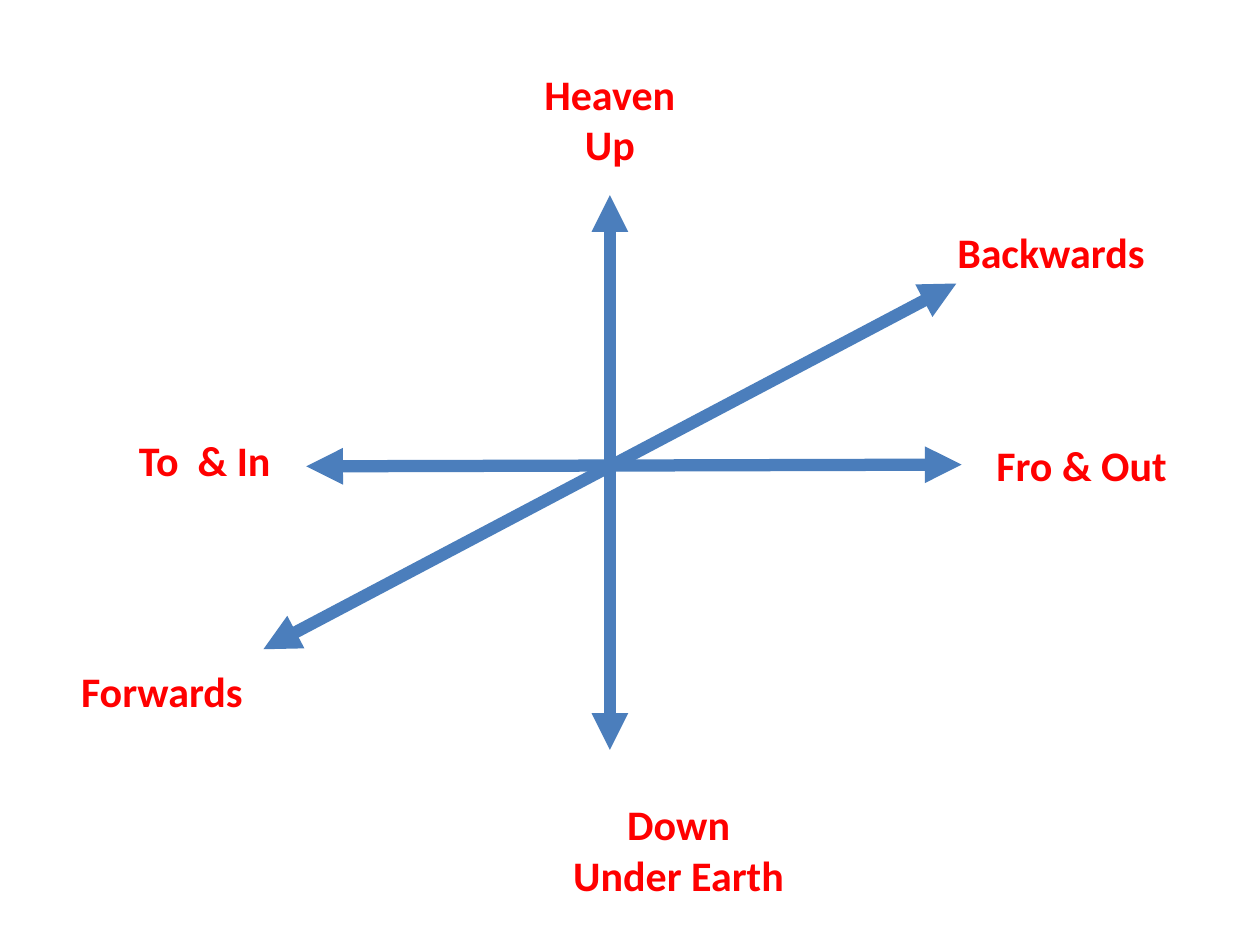
from lxml.etree import SubElement
from pptx import Presentation
from pptx.dml.color import RGBColor
from pptx.enum.shapes import MSO_CONNECTOR as Link
from pptx.enum.text import MSO_ANCHOR as Anchor, PP_ALIGN as Align
from pptx.oxml.ns import qn
from pptx.util import Pt

RED = RGBColor(0xFF, 0x00, 0x00)
BLUE = RGBColor(0x4B, 0x7E, 0xBC)

# Text, left, top, width
LABELS = [
    ("Heaven\nUp", 303, 39, 91),
    ("Down\nUnder Earth", 319, 456.5, 137.5),
    ("Fro & Out", 564, 251, 108),
    ("To  & In", 72, 248.5, 90),
    ("Backwards", 546, 129.5, 109),
    ("Forwards", 38, 380, 109),
]

# Start x, start y, end x, end y
AXES = [
    (348.5, 111.5, 348.5, 428.5),
    (549.5, 265.5, 175, 266.5),
    (546.5, 162, 150.5, 371),
]


class Sketch:
    font = "Calibri"
    size = 24
    row = 29
    weight = 7

    def __init__(self, slide):
        self.slide = slide

    def label(self, text, left, top, width):
        lines = text.count("\n") + 1
        box = self.slide.shapes.add_textbox(
            Pt(left), Pt(top), Pt(width), Pt(self.row * lines))
        frame = box.text_frame
        frame.word_wrap = True
        frame.vertical_anchor = Anchor.TOP
        frame.margin_left = frame.margin_right = 0
        frame.margin_top = frame.margin_bottom = 0
        frame.text = text
        for para in frame.paragraphs:
            para.alignment = Align.CENTER
            for run in para.runs:
                font = run.font
                font.name, font.size, font.bold = self.font, Pt(self.size), True
                font.color.rgb = RED

    def axis(self, *ends):
        """Draw a line with an arrowhead at both ends."""
        link = self.slide.shapes.add_connector(
            Link.STRAIGHT, *(Pt(end) for end in ends))
        link.line.color.rgb = BLUE
        link.line.width = Pt(self.weight)
        stroke = link.line._get_or_add_ln()
        for tip in ("a:headEnd", "a:tailEnd"):
            SubElement(stroke, qn(tip), type="triangle")
        SubElement(link._element.spPr, qn("a:effectLst"))


def main():
    deck = Presentation()
    deck.slide_width, deck.slide_height = Pt(720), Pt(540)
    blank = deck.slide_layouts[6]
    sketch = Sketch(deck.slides.add_slide(blank))
    for axis in AXES:
        sketch.axis(*axis)
    for label in LABELS:
        sketch.label(*label)
    deck.save("out.pptx")


if __name__ == "__main__":
    main()
